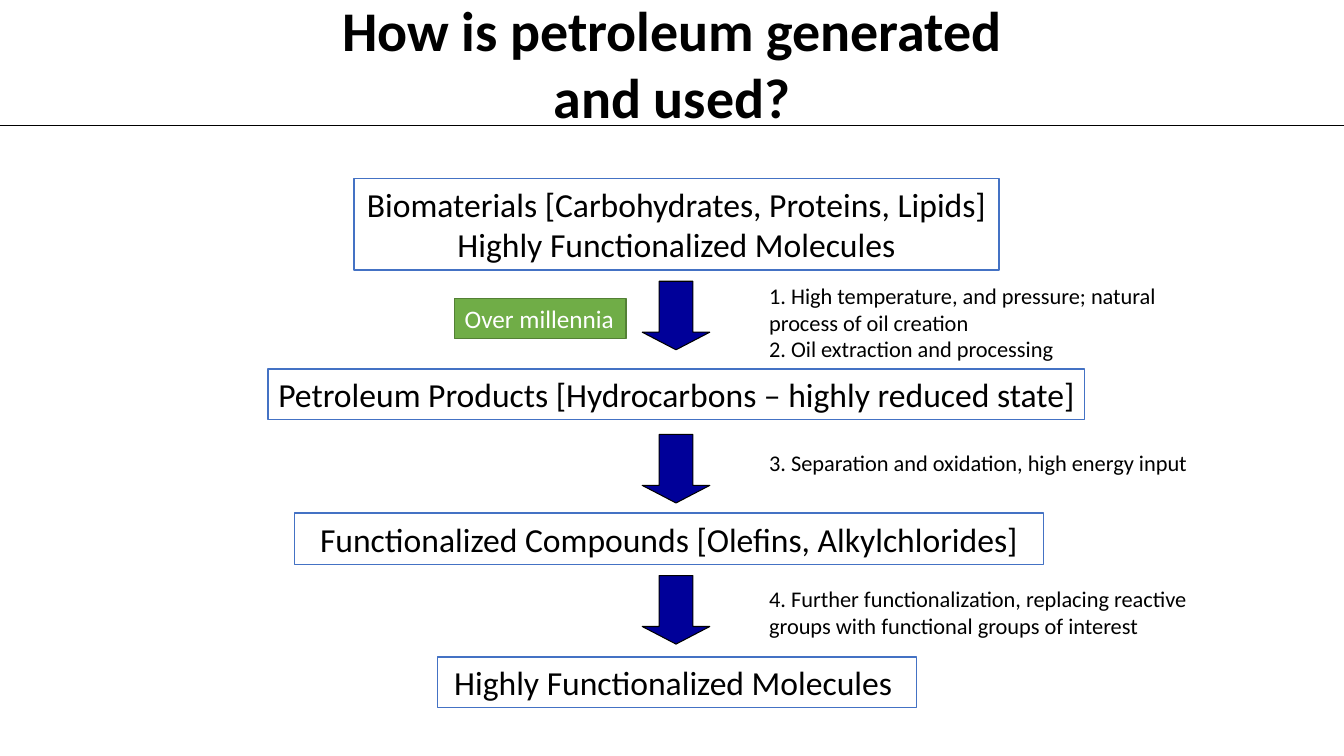
from lxml import etree
from pptx import Presentation
from pptx.dml.color import RGBColor
from pptx.enum.shapes import MSO_CONNECTOR, MSO_SHAPE
from pptx.enum.text import MSO_ANCHOR, PP_ALIGN
from pptx.oxml.ns import qn
from pptx.util import Inches, Pt

TITLE = "How is petroleum generated and used?"
# Stages: lines of text, left, top, width, height
STAGES = [
    (["Biomaterials [Carbohydrates, Proteins, Lipids]",
      "Highly Functionalized Molecules"], 3.51, 1.77, 6.4, 0.91),
    (["Petroleum Products [Hydrocarbons – highly reduced state]"], 2.66, 3.66, 8.1, 0.5),
    (["Functionalized Compounds [Olefins, Alkylchlorides]"], 2.92, 5.09, 7.43, 0.51),
    (["Highly Functionalized Molecules "], 4.34, 6.52, 4.75, 0.5),
]
# Steps between stages: arrow top, note lines, note top, note width, note height
STEPS = [
    (2.79, ["1. High temperature, and pressure; natural process of oil creation",
            "2. Oil extraction and processing"], 2.74, 4.56, 0.91),
    (4.31, ["3. Separation and oxidation, high energy input"], 4.4, 4.4, 0.37),
    (5.71, ["4. Further functionalization, replacing reactive groups with "
            "functional groups of interest"], 5.75, 4.94, 0.64),
]
DURATION = (["Over millennia"], 4.51, 2.96, 1.7, 0.4)

COLORS = {"text": "000000", "paper": "FFFFFF", "frame": "4472C4", "arrow": "000099",
          "badge": "70AD47", "badge_edge": "538035"}
WIDTH, HEIGHT = 13.33, 7.5
RULE_TOP = 1.24
ARROW_LEFT, ARROW_WIDTH, ARROW_HEIGHT = 6.37, 0.67, 0.68
NOTE_LEFT = 7.53


def color(name):
    return RGBColor.from_string(COLORS[name])


def write(shape, lines, size, ink="text", align=PP_ALIGN.LEFT, wrap=True, bold=False):
    frame = shape.text_frame
    frame.text = "\n".join(lines)
    frame.word_wrap = wrap
    frame.vertical_anchor = MSO_ANCHOR.MIDDLE
    look = {"name": "Calibri", "size": Pt(size), "bold": bold}
    for para in frame.paragraphs:
        para.alignment = align
        for span in para.runs:
            for key, value in look.items():
                setattr(span.font, key, value)
            span.font.color.rgb = color(ink)


def add_shape(page, kind, area, fill, edge, weight):
    shape = page.shapes.add_shape(kind, *map(Inches, area))
    shape.shadow.inherit = False
    shape.fill.solid()
    shape.fill.fore_color.rgb = color(fill)
    shape.line.color.rgb = color(edge)
    shape.line.width = Pt(weight)
    return shape


def add_title(page):
    title = page.shapes.title
    area = {"left": 3.13, "top": -0.1, "width": 7.07, "height": 1.45}
    for key, value in area.items():
        setattr(title, key, Inches(value))
    write(title, [TITLE], 40, align=PP_ALIGN.CENTER, bold=True)
    rule = page.shapes.add_connector(MSO_CONNECTOR.STRAIGHT, 0, Inches(RULE_TOP),
                                     Inches(WIDTH), Inches(RULE_TOP))
    rule.line.color.rgb = color("text")
    rule.line.width = Pt(0.5)
    etree.SubElement(rule._element.spPr, qn("a:effectLst"))


def main():
    deck = Presentation()
    deck.slide_width, deck.slide_height = Inches(WIDTH), Inches(HEIGHT)
    page = deck.slides.add_slide(deck.slide_layouts[5])
    add_title(page)

    for lines, *area in STAGES:
        box = add_shape(page, MSO_SHAPE.RECTANGLE, area, "paper", "frame", 1)
        write(box, lines, 24, align=PP_ALIGN.CENTER, wrap=False)

    for arrow_top, lines, top, width, height in STEPS:
        area = ARROW_LEFT, arrow_top, ARROW_WIDTH, ARROW_HEIGHT
        arrow = add_shape(page, MSO_SHAPE.DOWN_ARROW, area, "arrow", "text", 0.75)
        arrow.adjustments[1] = 0.26
        note = page.shapes.add_textbox(*map(Inches, (NOTE_LEFT, top, width, height)))
        write(note, lines, 16)

    lines, *area = DURATION
    badge = add_shape(page, MSO_SHAPE.RECTANGLE, area, "badge", "badge_edge", 1)
    write(badge, lines, 18, ink="paper", wrap=False)
    deck.save("out.pptx")


if __name__ == "__main__":
    main()
